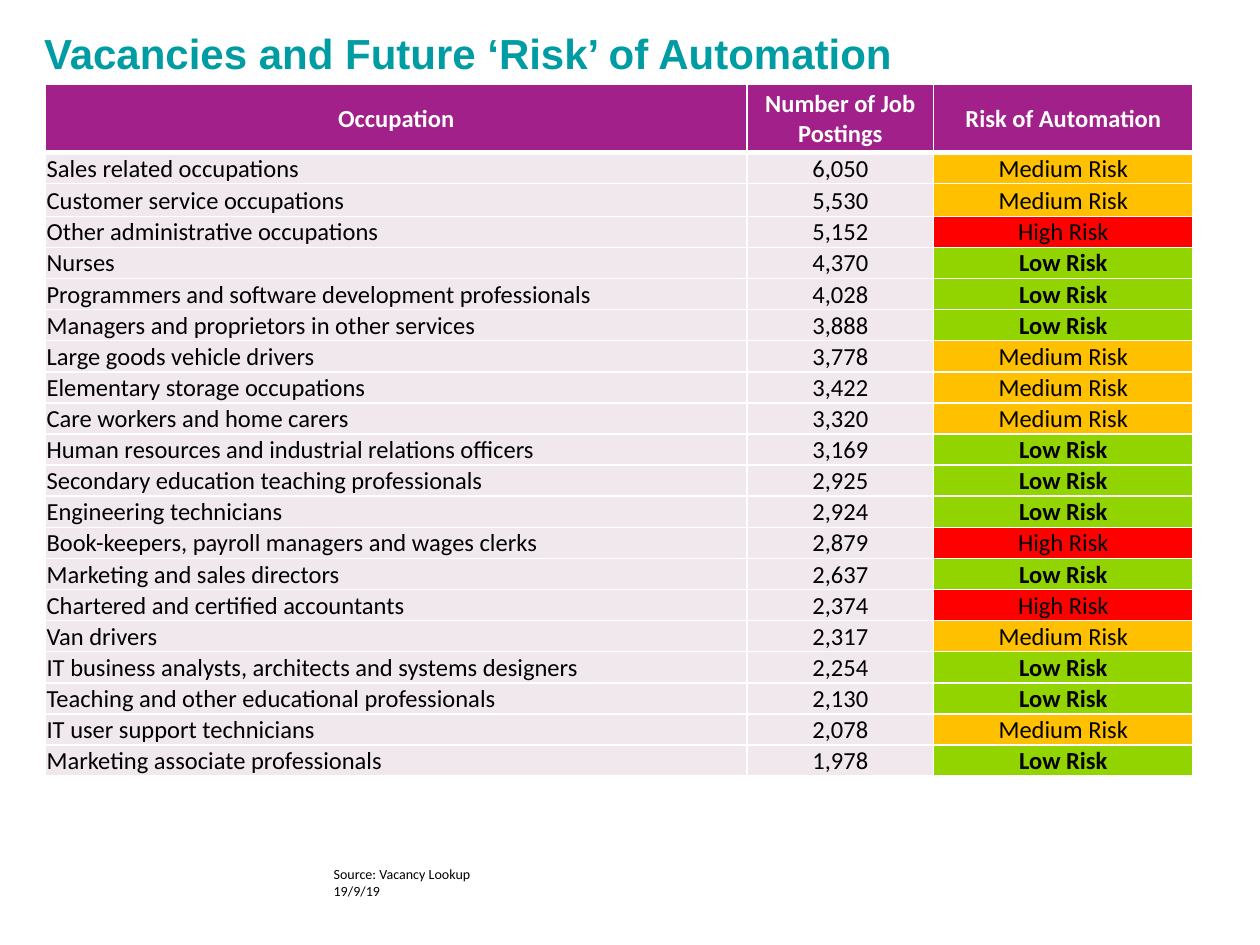
from lxml import etree
from pptx import Presentation
from pptx.dml.color import RGBColor
from pptx.enum.text import MSO_ANCHOR, PP_ALIGN
from pptx.oxml.ns import qn
from pptx.util import Inches, Pt

LEFT, CENTER = PP_ALIGN.LEFT, PP_ALIGN.CENTER
TOP, MIDDLE, BOTTOM = MSO_ANCHOR.TOP, MSO_ANCHOR.MIDDLE, MSO_ANCHOR.BOTTOM
TITLE_ONLY = 5

COLORS = {
    "title": "009CA3",
    "header": "A12089",
    "row": "F0E8ED",
    "text": "000000",
    "white": "FFFFFF",
    "Low": "92D400",
    "Medium": "FFC000",
    "High": "FF0000",
}

COLUMN_WIDTHS = [5.57, 1.48, 2.06]
HEADER_HEIGHT, ROW_HEIGHT, TALL_ROW_HEIGHT = 0.54, 0.21, 0.26
TALL_ROW = 2
HEADERS = ["Occupation", "Number of Job Postings", "Risk of Automation"]
OCCUPATIONS = [
    ("Sales related occupations", 6050, "Medium"),
    ("Customer service occupations", 5530, "Medium"),
    ("Other administrative occupations", 5152, "High"),
    ("Nurses", 4370, "Low"),
    ("Programmers and software development professionals", 4028, "Low"),
    ("Managers and proprietors in other services", 3888, "Low"),
    ("Large goods vehicle drivers", 3778, "Medium"),
    ("Elementary storage occupations", 3422, "Medium"),
    ("Care workers and home carers", 3320, "Medium"),
    ("Human resources and industrial relations officers", 3169, "Low"),
    ("Secondary education teaching professionals", 2925, "Low"),
    ("Engineering technicians", 2924, "Low"),
    ("Book-keepers, payroll managers and wages clerks", 2879, "High"),
    ("Marketing and sales directors", 2637, "Low"),
    ("Chartered and certified accountants", 2374, "High"),
    ("Van drivers", 2317, "Medium"),
    ("IT business analysts, architects and systems designers", 2254, "Low"),
    ("Teaching and other educational professionals", 2130, "Low"),
    ("IT user support technicians", 2078, "Medium"),
    ("Marketing associate professionals", 1978, "Low"),
]


def write_text(text_frame, text, *, size=14, font="Calibri", color="text",
               bold=False, align=LEFT):
    paragraph = text_frame.paragraphs[0]
    paragraph.alignment = align
    run = paragraph.add_run()
    run.text = text
    run.font.size = Pt(size)
    run.font.name = font
    run.font.bold = bold
    run.font.color.rgb = RGBColor.from_string(COLORS[color])


def set_borders(cell, bottom_width=1):
    properties = cell._tc.get_or_add_tcPr()
    for side, width in (("L", 1), ("R", 1), ("T", 1), ("B", bottom_width)):
        line = etree.SubElement(properties, qn(f"a:ln{side}"), w=str(Pt(width)))
        fill = etree.SubElement(line, qn("a:solidFill"))
        etree.SubElement(fill, qn("a:srgbClr"), val=COLORS["white"])


def format_cell(cell, text, fill, *, anchor=BOTTOM, bottom_width=1, **text_format):
    cell.margin_left = cell.margin_top = cell.margin_right = Inches(0.01)
    cell.margin_bottom = 0
    cell.vertical_anchor = anchor
    set_borders(cell, bottom_width)
    cell.fill.solid()
    cell.fill.fore_color.rgb = RGBColor.from_string(COLORS[fill])
    write_text(cell.text_frame, text, **text_format)


def add_title(slide, text):
    title = slide.shapes.title
    title.left, title.top = Inches(0.16), Inches(0.17)
    title.width, title.height = Inches(9.48), Inches(0.5)
    title.text_frame.margin_left = Inches(0.19)
    title.text_frame.vertical_anchor = TOP
    write_text(title.text_frame, text, size=24, font="Arial", color="title", bold=True)


def add_occupation_table(slide):
    heights = [HEADER_HEIGHT] + [ROW_HEIGHT] * len(OCCUPATIONS)
    heights[TALL_ROW] = TALL_ROW_HEIGHT
    table = slide.shapes.add_table(
        len(heights), len(COLUMN_WIDTHS), Inches(0.36), Inches(0.67),
        Inches(sum(COLUMN_WIDTHS)), Inches(sum(heights))).table
    for column, width in zip(table.columns, COLUMN_WIDTHS):
        column.width = Inches(width)
    for row, height in zip(table.rows, heights):
        row.height = Inches(height)

    # Header row
    for column, header in enumerate(HEADERS):
        format_cell(table.cell(0, column), header, "header", anchor=MIDDLE,
                    bottom_width=3, color="white", bold=True, align=CENTER)

    # One row per occupation, coloured by its risk level
    for row, (occupation, postings, risk) in enumerate(OCCUPATIONS, start=1):
        format_cell(table.cell(row, 0), occupation, "row")
        format_cell(table.cell(row, 1), f"{postings:,}", "row", align=CENTER)
        format_cell(table.cell(row, 2), f"{risk} Risk", risk,
                    bold=risk == "Low", align=CENTER)


def add_source_note(slide, text):
    note = slide.shapes.add_textbox(Inches(2.55), Inches(6.82), Inches(1.63), Inches(0.37))
    note.text_frame.word_wrap = True
    write_text(note.text_frame, text, size=8)


def main():
    presentation = Presentation()
    presentation.slide_width, presentation.slide_height = Inches(10), Inches(7.5)
    slide = presentation.slides.add_slide(presentation.slide_layouts[TITLE_ONLY])
    add_title(slide, "Vacancies and Future ‘Risk’ of Automation")
    add_occupation_table(slide)
    add_source_note(slide, "Source: Vacancy Lookup 19/9/19")
    presentation.save("out.pptx")


if __name__ == "__main__":
    main()
